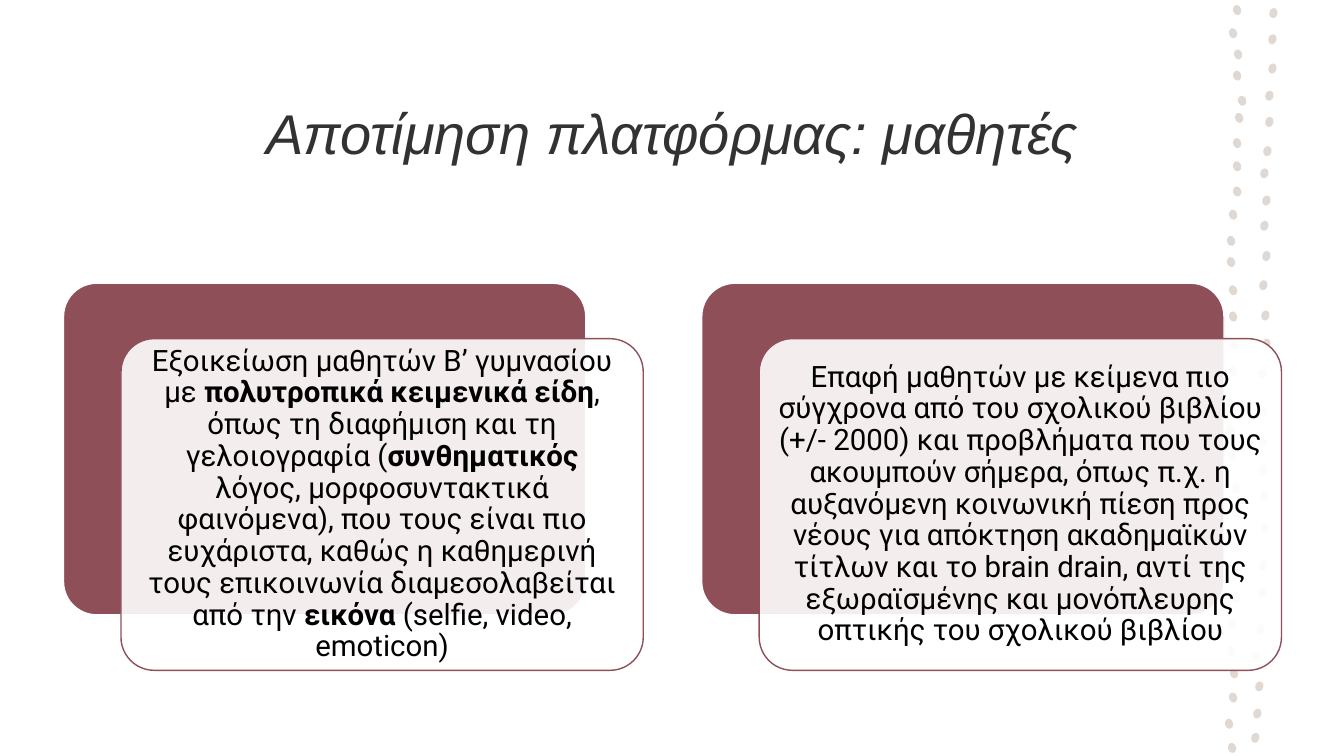
"""Build the slide on how pupils rate the platform: two layered cards beside a dotted border."""
from dataclasses import dataclass

from lxml.etree import SubElement
from pptx import Presentation
from pptx.dml.color import RGBColor
from pptx.enum.shapes import MSO_SHAPE as Preset
from pptx.enum.text import MSO_ANCHOR as Anchor, MSO_AUTO_SIZE as AutoSize, PP_ALIGN as Align
from pptx.oxml.ns import qn
from pptx.util import Inches, Pt


@dataclass(frozen=True)
class Theme:
    wine: RGBColor = RGBColor.from_string("8F4F58")
    white: RGBColor = RGBColor.from_string("FFFFFF")
    sand: RGBColor = RGBColor.from_string("E0D8D2")
    heading: RGBColor = RGBColor.from_string("323232")
    ink: RGBColor = RGBColor.from_string("000000")
    heading_font: str = "Arial"
    body_font: str = "Roboto"
    heading_size: Pt = Pt(40)
    body_size: Pt = Pt(21)
    outline: Pt = Pt(1)


theme = Theme()
COLUMNS, ROWS, CELL = 1333, 750, Inches(0.01)


def add_panel(preset, column, row, columns, rows, fill):
    panel = slide.shapes.add_shape(preset, *(n * CELL for n in (column, row, columns, rows)))
    panel.shadow.inherit = False
    panel.fill.solid()
    panel.fill.fore_color.rgb = fill
    return panel


def add_run(paragraph, text, font_name, size, color, bold=False, italic=False):
    run = paragraph.add_run()
    run.text = text
    run.font.name, run.font.size = font_name, size
    run.font.bold, run.font.italic = bold, italic
    run.font.color.rgb = color


deck = Presentation()
deck.slide_width, deck.slide_height = COLUMNS * CELL, ROWS * CELL
slide = deck.slides.add_slide(deck.slide_layouts[5])

DOT_COLUMNS, DOT_ROWS, DOT_TILT = 8, 10, 15
inner_border = [
    (1227, 10), (1223, 33), (1228, 54), (1227, 75), (1232, 100), (1229, 117),
    (1227, 142), (1227, 165), (1227, 190), (1223, 213), (1221, 239), (1221, 260),
    (1223, 288), (1223, 314), (1224, 342), (1223, 368), (1220, 399), (1220, 426),
    (1222, 452), (1226, 485), (1226, 509), (1224, 542), (1224, 568), (1226, 593),
    (1222, 619), (1221, 646), (1224, 668), (1223, 692), (1219, 718), (1222, 742),
]
outer_border = [
    (1263, 13), (1262, 39), (1262, 68), (1259, 95), (1259, 121), (1257, 150),
    (1254, 172), (1256, 199), (1254, 224), (1256, 254), (1253, 283), (1255, 313),
    (1256, 341), (1252, 371), (1253, 408), (1252, 439), (1253, 466), (1254, 492),
    (1255, 524), (1253, 561), (1252, 588), (1250, 624), (1246, 652), (1249, 681),
    (1247, 708), (1245, 732),
]
for border, tilt in ((inner_border, -DOT_TILT), (outer_border, DOT_TILT)):
    for column, row in border:
        dot = add_panel(Preset.OVAL, column - DOT_COLUMNS / 2, row - DOT_ROWS / 2,
                        DOT_COLUMNS, DOT_ROWS, theme.sand)
        dot.line.fill.background()
        dot.rotation = tilt

title = slide.shapes.title
title.left, title.top, title.width, title.height = (n * CELL for n in (156, 77, 1022, 109))
heading = title.text_frame
heading.word_wrap, heading.auto_size = True, AutoSize.NONE
heading.vertical_anchor = Anchor.MIDDLE
heading.paragraphs[0].alignment = Align.CENTER
add_run(heading.paragraphs[0], "Αποτίμηση πλατφόρμας: μαθητές",
        theme.heading_font, theme.heading_size, theme.heading, italic=True)

benefits = [
    [
        ("Εξοικείωση μαθητών Β’ γυμνασίου με ", False),
        ("πολυτροπικά κειμενικά είδη", True),
        (", όπως τη διαφήμιση και τη γελοιογραφία (", False),
        ("συνθηματικός", True),
        (" λόγος, μορφοσυντακτικά φαινόμενα), που τους είναι πιο ευχάριστα, "
         "καθώς η καθημερινή τους επικοινωνία διαμεσολαβείται από την", False),
        (" εικόνα ", True),
        ("(selfie, video, emoticon)", False),
    ],
    [
        ("Επαφή μαθητών με κείμενα πιο σύγχρονα από του σχολικού βιβλίου (+/- 2000) "
         "και προβλήματα που τους ακουμπούν σήμερα, όπως π.χ. η αυξανόμενη κοινωνική "
         "πίεση προς νέους για απόκτηση ακαδημαϊκών τίτλων και το brain drain, αντί της "
         "εξωραϊσμένης και μονόπλευρης οπτικής του σχολικού βιβλίου", False),
    ],
]
CARD_LEFT, CARD_TOP, CARD_COLUMNS, CARD_ROWS = 63, 281, 518, 329
CARD_PITCH, SHIFT_COLUMNS, SHIFT_ROWS = 633, 57, 55
for index, benefit in enumerate(benefits):
    left = CARD_LEFT + index * CARD_PITCH
    backing = add_panel(Preset.ROUNDED_RECTANGLE, left, CARD_TOP,
                        CARD_COLUMNS, CARD_ROWS, theme.wine)
    card = add_panel(Preset.ROUNDED_RECTANGLE, left + SHIFT_COLUMNS, CARD_TOP + SHIFT_ROWS,
                     CARD_COLUMNS, CARD_ROWS, theme.white)
    for layer, edge in ((backing, theme.white), (card, theme.wine)):
        layer.adjustments[0] = 0.1
        layer.line.color.rgb, layer.line.width = edge, theme.outline
    card_color = card.fill._xPr.find(qn("a:solidFill"))[0]
    SubElement(card_color, qn("a:alpha"), val="90000")

    body = card.text_frame
    body.word_wrap, body.vertical_anchor = True, Anchor.MIDDLE
    body.margin_left = body.margin_right = body.margin_top = body.margin_bottom = 9 * CELL
    paragraph = body.paragraphs[0]
    paragraph.alignment, paragraph.line_spacing = Align.CENTER, 0.9
    for text, bold in benefit:
        add_run(paragraph, text, theme.body_font, theme.body_size, theme.ink, bold=bold)

deck.save("out.pptx")
